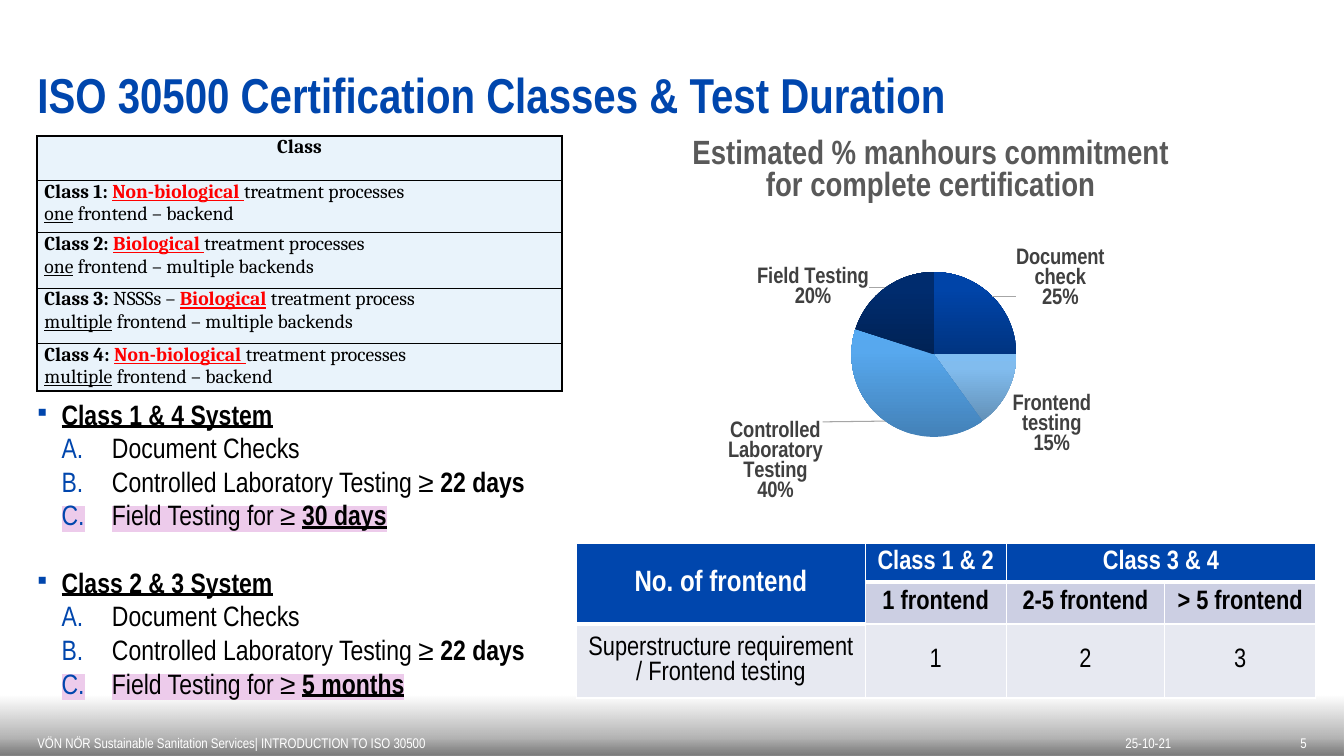
from copy import deepcopy

from pptx import Presentation
from pptx.chart.data import CategoryChartData as Data
from pptx.dml.color import RGBColor
from pptx.enum.chart import XL_CHART_TYPE as Kind, XL_LABEL_POSITION as Spot
from pptx.enum.shapes import MSO_SHAPE as Form
from pptx.enum.text import MSO_ANCHOR as Anchor, PP_ALIGN as Align
from pptx.oxml import parse_xml
from pptx.oxml.ns import nsdecls
from pptx.util import Inches, Pt

WIDE, HIGH = Inches(13.33), Inches(7.5)
BLUE, BLACK, WHITE, RED = "0046AD", "000000", "FFFFFF", "FF0000"
NARROW = "Arial Narrow"

CLASSES = [
    [[("Class", "b")]],
    [[("Class 1: ", "b"), ("Non-biological ", "bur"), ("treatment processes", "")],
     [("one", "u"), (" frontend – backend", "")]],
    [[("Class 2: ", "b"), ("Biological ", "bur"), ("treatment processes", "")],
     [("one", "u"), (" frontend – multiple backends", "")]],
    [[("Class 3:", "b"), (" NSSSs – ", ""), ("Biological", "bur"), (" treatment process", "")],
     [("multiple", "u"), (" frontend – multiple backends", "")]],
    [[("Class 4: ", "b"), ("Non-biological ", "bur"), ("treatment processes", "")],
     [("multiple", "u"), (" frontend – backend", "")]],
]
FRONTS = [
    ["No. of frontend", "Class 1 & 2", "Class 3 & 4", ""],
    ["", "1 frontend", "2-5 frontend", "> 5 frontend"],
    ["Superstructure requirement / Frontend testing", "1", "2", "3"],
]
SYSTEMS = [("Class 1 & 4 System", "30 days"), ("Class 2 & 3 System", "5 months")]
SHARES = {"Document check": 25, "Frontend testing": 15,
          "Controlled Laboratory Testing": 40, "Field Testing": 20}
SHADES = [("003481", "0044A8", "0044A8"), ("6391B8", "81BCEE", "7FBDF2"),
          ("4381B8", "57A8EE", "55A9F2"), ("002255", "002C6E", "002C6F")]
SHIFTS = {0: (0.03, 0.04), 2: (-0.09, -0.01), 3: (-0.02, 0.06)}


def tint(code):
    """Turn a hex string into a colour."""
    return RGBColor.from_string(code)


def across(share):
    """Give a percentage of the slide's width."""
    return int(WIDE * share / 100)


def down(share):
    """Give a percentage of the slide's height."""
    return int(HIGH * share / 100)


def place(x, y, w, h):
    """Turn percentages into a position and a size."""
    return across(x), down(y), across(w), down(h)


def style(item, **values):
    """Set attributes from format values."""
    for name, value in values.items():
        setattr(item, name, value)


def dress(font, size, color=BLACK, face=NARROW, bold=False, line=False):
    """Set the look of a font."""
    style(font, size=Pt(size), name=face, bold=bold, underline=line)
    font.color.rgb = tint(color)


def write(para, text, marks, size, color=BLACK, face=NARROW):
    """Add a run; marks are b bold, u underlined, r red, h highlighted."""
    run = para.add_run()
    run.text = text
    dress(run.font, size, RED if "r" in marks else color, face, "b" in marks, "u" in marks)
    if "h" in marks:
        glow = f'<a:highlight {nsdecls("a")}><a:srgbClr val="EDCBEB"/></a:highlight>'
        run._r.xpath("a:rPr/a:latin")[0].addprevious(parse_xml(glow))


def grade(props, stops):
    """Replace a solid fill by a gradient rising from the bottom."""
    marks = "".join(
        f'<a:gs pos="{pos * 1000}"><a:srgbClr val="{code}"><a:alpha val="{alpha * 1000}"/>'
        f'</a:srgbClr></a:gs>' for pos, code, alpha in stops)
    fade = parse_xml(f'<a:gradFill {nsdecls("a")} rotWithShape="1"><a:gsLst>{marks}</a:gsLst>'
                     '<a:lin ang="16200000" scaled="0"/></a:gradFill>')
    old = props.xpath("a:solidFill")[0]
    old.getparent().replace(old, fade)


def label(slide, spot, text, size, color, marks="", inset=(0, 0, 0, 0),
          anchor=Anchor.TOP, align=Align.LEFT):
    """Add a one-line text box."""
    frame = slide.shapes.add_textbox(*place(*spot)).text_frame
    left, top, right, low = map(Inches, inset)
    style(frame, word_wrap=True, vertical_anchor=anchor, margin_left=left,
          margin_top=top, margin_right=right, margin_bottom=low)
    para = frame.paragraphs[0]
    para.alignment = align
    write(para, text, marks, size, color)


def band(slide):
    """Add the shaded foot with the page number."""
    foot = slide.shapes.add_shape(Form.RECTANGLE, *place(0, 92, 100, 8))
    foot.shadow.inherit = False
    foot.fill.solid()
    foot.line.fill.background()
    grade(foot._element.spPr, [(0, "212121", 60), (29, BLACK, 30), (100, BLACK, 0)])
    style(foot.text_frame, vertical_anchor=Anchor.BOTTOM, margin_right=Inches(0.37))
    para = foot.text_frame.paragraphs[0]
    style(para, alignment=Align.RIGHT, space_after=Pt(6))
    write(para, "5", "", 10, WHITE)


def grid(slide, x, y, cols, rows):
    """Add a plain table with given column and row shares."""
    spot = place(x, y, sum(cols), sum(rows))
    table = slide.shapes.add_table(len(rows), len(cols), *spot).table
    style(table, first_row=False, horz_banding=False)
    for col, share in zip(table.columns, cols):
        col.width = across(share)
    for row, share in zip(table.rows, rows):
        row.height = down(share)
    return table


def finish(cell, fill, color, widths, inset, anchor):
    """Set a cell's fill, margins and left, right, top and bottom borders."""
    wide, tall = map(Inches, inset)
    style(cell, vertical_anchor=anchor, margin_left=wide, margin_right=wide,
          margin_top=tall, margin_bottom=tall)
    cell.fill.solid()
    cell.fill.fore_color.rgb = tint(fill)
    for i, (side, width) in enumerate(zip("LRTB", widths)):
        edge = (f'<a:ln{side} {nsdecls("a")} w="{Pt(width)}"><a:solidFill>'
                f'<a:srgbClr val="{color}"/></a:solidFill></a:ln{side}>')
        cell._tc.get_or_add_tcPr().insert(i, parse_xml(edge))


def classes(slide):
    """Add the table of the four classes."""
    table = grid(slide, 2.78, 18, [39.01], [5.87, 6.93, 7.33, 7.33, 6.27])
    rules = [1.5, 1.5, 1, 1, 1, 1.5]
    for i, lines in enumerate(CLASSES):
        cell = table.cell(i, 0)
        finish(cell, "E9F3FB", BLACK, (1.5, 1.5, rules[i], rules[i + 1]), (0.07, 0), Anchor.TOP)
        for j, runs in enumerate(lines):
            para = cell.text_frame.add_paragraph() if j else cell.text_frame.paragraphs[0]
            para.alignment = Align.JUSTIFY if i else Align.CENTER
            for text, marks in runs:
                write(para, text, marks, 14, face="Cambria")


def fronts(slide):
    """Add the table of frontend counts."""
    table = grid(slide, 42.91, 71.87, [21.46, 10.5, 11.78, 11.25], [5.07, 5.07, 8.8])
    table.cell(0, 0).merge(table.cell(1, 0))
    table.cell(0, 2).merge(table.cell(0, 3))
    fills, rules = [BLUE, "CCCFE3", "E7E9F1"], [1, 3, 1, 1]
    for i, row in enumerate(FRONTS):
        for j, text in enumerate(row):
            cell, head = table.cell(i, j), i == 0 or (i == 1 and j == 0)
            finish(cell, BLUE if head else fills[i], WHITE, (1, 1, rules[i], rules[i + 1]),
                   (0.11, 0.05), Anchor.MIDDLE)
            if text:
                para = cell.text_frame.paragraphs[0]
                style(para, alignment=Align.CENTER, line_spacing=1.0 if i == 2 else 0.9)
                write(para, text, "b" if i < 2 else "", 21 if i == j == 0 else 19,
                      WHITE if head else BLACK)


def point(frame, level, runs, gap=0):
    """Add a bulleted or lettered line."""
    first = not frame.paragraphs[0].runs
    para = frame.paragraphs[0] if first else frame.add_paragraph()
    style(para, level=level, line_spacing=Pt(24), space_before=Pt(gap))
    props = para._p.get_or_add_pPr()
    left, hang = ((0.24, 0.24), (0.74, 0.5))[level]
    props.set("marL", str(Inches(left)))
    props.set("indent", str(-Inches(hang)))
    sign = ('<a:buChar {} char="▪"/>', '<a:buAutoNum {} type="alphaUcPeriod"/>')[level]
    for part in (f'<a:buClr {{}}><a:srgbClr val="{BLUE}"/></a:buClr>',
                 f'<a:buFont {{}} typeface="{NARROW}"/>', sign):
        props.append(parse_xml(part.format(nsdecls("a"))))
    for text, marks in runs:
        write(para, text, marks, 20)


def systems(slide):
    """Add the list of tests for each system."""
    frame = slide.shapes.add_textbox(*place(2.78, 52.53, 54.31, 44.8)).text_frame
    style(frame, word_wrap=True, margin_left=0, margin_top=0, margin_right=0, margin_bottom=0)
    for i, (name, span) in enumerate(SYSTEMS):
        point(frame, 0, [(name, "bu")], 24 * i)
        point(frame, 1, [("Document Checks", "")])
        point(frame, 1, [("Controlled Laboratory Testing ≥ ", ""), ("22 days", "b")])
        point(frame, 1, [("Field Testing for ≥ ", "h"), (span, "buh")])


def layout(x, y, more=""):
    """Make a manual chart layout."""
    return parse_xml(f'<c:layout {nsdecls("c")}><c:manualLayout>{more}<c:x val="{x}"/>'
                     f'<c:y val="{y}"/></c:manualLayout></c:layout>')


def pie(slide):
    """Add the pie of estimated manhours."""
    data = Data(number_format="General")
    data.categories = list(SHARES)
    data.add_series("Series 1", list(SHARES.values()))
    chart = slide.shapes.add_chart(Kind.PIE, *place(44.71, 15.47, 49.06, 53.73), data).chart
    style(chart, has_legend=False, has_title=True)
    dress(chart.font, 10)
    write(chart.chart_title.text_frame.paragraphs[0],
          "Estimated % manhours commitment for complete certification", "b", 24, "595959")
    series = chart.plots[0].series[0]
    for i, shade in enumerate(SHADES):
        form = series.points[i].format
        form.fill.solid()
        form.line.fill.background()
        props = series._element.xpath(f"c:dPt[c:idx/@val={i}]/c:spPr")[0]
        grade(props, [(pos, code, 100) for pos, code in zip((0, 80, 100), shade)])
    tags = series.data_labels
    style(tags, show_value=False, show_percentage=True, show_category_name=True,
          position=Spot.OUTSIDE_END)
    dress(tags.font, 16, "404040", bold=True)
    root = tags._element
    root.xpath("c:showBubbleSize")[0].addnext(
        parse_xml(f'<c:separator {nsdecls("c")}>\n</c:separator>'))
    parts = [part for part in root if not part.tag.endswith("showLeaderLines")]
    for i, (key, shift) in enumerate(SHIFTS.items()):
        tag = parse_xml(f'<c:dLbl {nsdecls("c")}><c:idx val="{key}"/></c:dLbl>')
        tag.append(layout(*shift))
        tag.extend(deepcopy(part) for part in parts)
        root.insert(i, tag)
    root.append(parse_xml(
        f'<c:leaderLines {nsdecls("c", "a")}><c:spPr><a:ln w="9525"><a:solidFill>'
        '<a:srgbClr val="A6A6A6"/></a:solidFill></a:ln></c:spPr></c:leaderLines>'))
    area = chart._chartSpace.xpath("c:chart/c:plotArea")[0]
    for old in area.xpath("c:layout"):
        area.remove(old)
    inner = layout(0.38, 0.38, '<c:layoutTarget val="inner"/><c:xMode val="edge"/>'
                   '<c:yMode val="edge"/>')
    for side, share in (("w", 0.25), ("h", 0.41)):
        inner[0].append(parse_xml(f'<c:{side} {nsdecls("c")} val="{share}"/>'))
    area.insert(0, inner)


def main():
    """Build the slide and save it."""
    deck = Presentation()
    style(deck, slide_width=WIDE, slide_height=HIGH)
    slide = deck.slides.add_slide(deck.slide_layouts[6])
    band(slide)
    classes(slide)
    systems(slide)
    label(slide, (2.78, 8.53, 94.52, 7.87), "ISO 30500 Certification Classes & Test Duration",
          35, BLUE, "b")
    label(slide, (79.52, 96.27, 11.85, 3.73), "25-10-21", 10, WHITE, "",
          (0.1, 0.05, 0.1, 0.05), Anchor.BOTTOM, Align.CENTER)
    label(slide, (0, 96.27, 71.27, 3.73),
          "VÖN NÖR Sustainable Sanitation Services| INTRODUCTION TO ISO 30500", 10, WHITE, "",
          (0.37, 0.05, 0, 0.05), Anchor.BOTTOM)
    fronts(slide)
    pie(slide)
    deck.save("out.pptx")


if __name__ == "__main__":
    main()
